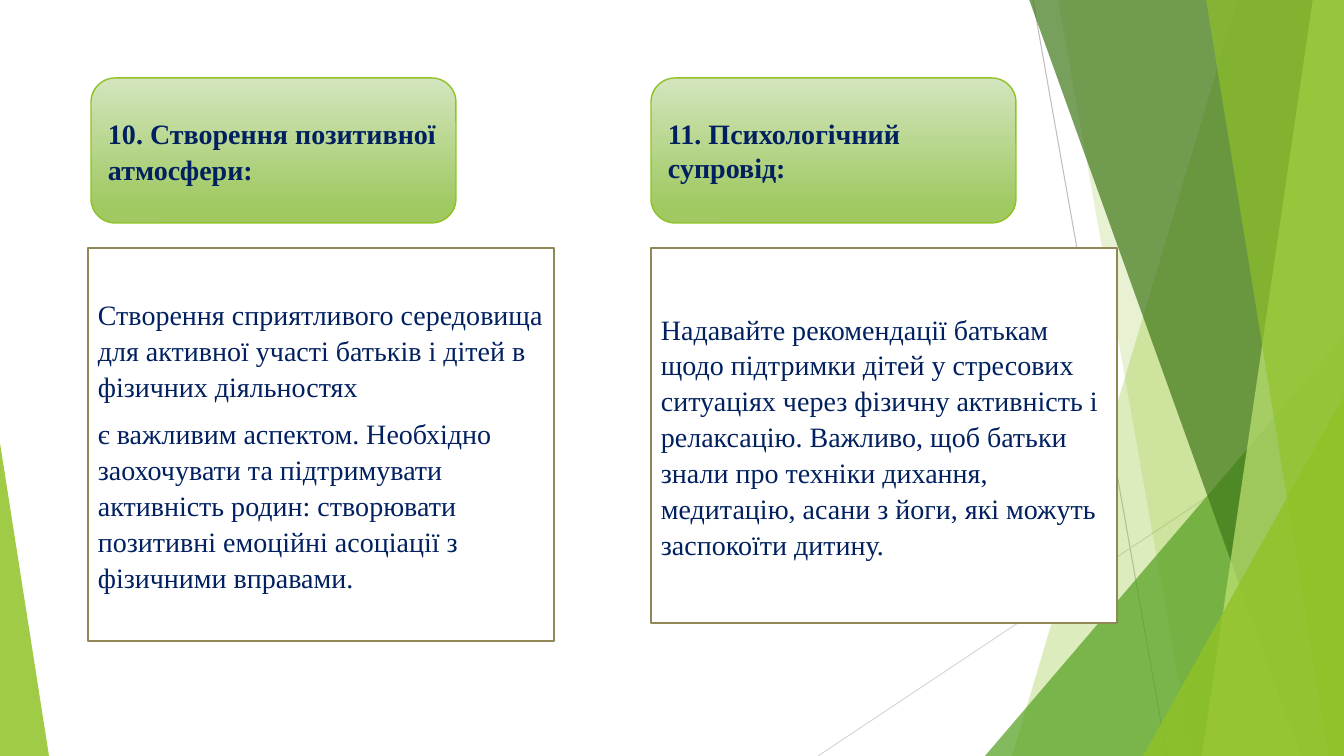
from lxml.etree import SubElement
from pptx import Presentation
from pptx.dml.color import RGBColor
from pptx.enum.shapes import MSO_CONNECTOR as CONN, MSO_SHAPE as SHAPE
from pptx.enum.text import MSO_ANCHOR as ANCHOR, PP_ALIGN as ALIGN
from pptx.oxml.ns import qn
from pptx.util import Pt

W, H = 1344, 756
EMU_PER_PX = 914400 / 100.8
FONT, NAVY, GREEN, OLIVE = "Times New Roman", "002060", "90C226", "918655"

RAYS = [((1033, 0), (1167, H), "BFBFBF"), ((W, 406), (818, H), "D9D9D9")]

# Bands run to the right edge: top x, bottom x, colour, opacity %.
# Corners are right triangles: left, top, width, height, apex, colour, opacity %.
FACETS = [
    ("band", (1238, 1012), GREEN, 30),
    ("band", (1058, 1192), GREEN, 20),
    ("corner", (985, 336, 359, 420, 1), "54A021", 72),
    ("band", (1029, 1301), "3F7819", 70),
    ("band", (1313, 1202), "C0E474", 70),
    ("band", (1206, 1329), GREEN, 65),
    ("corner", (1143, 396, 201, 360, 1), GREEN, 80),
    ("corner", (0, 443, 49, 313, 0), GREEN, 85),
]

# Box, paragraphs, line spacing, space before, space after
HEADINGS = [
    ((91, 78, 365, 145), ["10. Створення позитивної атмосфери:"], 1.07, 0, 8),
    ((651, 78, 365, 145), ["11. Психологічний супровід:"], 1, 0, 0),
]
BODIES = [
    ((88, 248, 466, 393), [
        "Створення сприятливого середовища для активної участі батьків і дітей "
        "в фізичних діяльностях",
        "є важливим аспектом. Необхідно заохочувати та підтримувати активність "
        "родин: створювати позитивні емоційні асоціації з фізичними вправами.",
    ], 1.07, 0, 8),
    ((651, 248, 466, 375), [
        "Надавайте рекомендації батькам щодо підтримки дітей у стресових "
        "ситуаціях через фізичну активність і релаксацію. Важливо, щоб батьки "
        "знали про техніки дихання, медитацію, асани з йоги, які можуть "
        "заспокоїти дитину.",
    ], 1.07, 12, 8),
]


def px(n):
    return round(n * EMU_PER_PX)


def rgb(color):
    return RGBColor.from_string(color)


def add_ray(shapes, start, end, color):
    line = shapes.add_connector(CONN.STRAIGHT, *map(px, start + end))
    line.line.color.rgb = rgb(color)
    line.line.width = Pt(0.75)
    SubElement(line._element.spPr, qn("a:effectLst"))


def add_shape(shapes, kind, box):
    sp = shapes.add_shape(kind, *map(px, box))
    sp.shadow.inherit = False
    return sp


def add_facet(shapes, kind, geometry, color, opacity):
    if kind == "band":
        top_x, bottom_x = geometry
        outline = shapes.build_freeform(top_x, -1, scale=EMU_PER_PX)
        outline.add_line_segments([(W, -1), (W, H), (bottom_x, H)])
        sp = outline.convert_to_shape()
        sp.shadow.inherit = False
    else:
        *box, apex = geometry
        sp = add_shape(shapes, SHAPE.ISOSCELES_TRIANGLE, box)
        sp.adjustments[0] = apex
    sp.line.fill.background()
    sp.fill.solid()
    sp.fill.fore_color.rgb = rgb(color)
    clr = sp._element.spPr.find(qn("a:solidFill"))[0]
    SubElement(clr, qn("a:alpha"), val=str(opacity * 1000))


def add_card(shapes, kind, line, width, bold, card):
    box, texts, spacing, before, after = card
    sp = add_shape(shapes, kind, box)
    sp.line.color.rgb = rgb(line)
    sp.line.width = Pt(width)
    tf = sp.text_frame
    tf.word_wrap = True
    tf.vertical_anchor = ANCHOR.MIDDLE
    for i, text in enumerate(texts):
        p = tf.add_paragraph() if i else tf.paragraphs[0]
        p.text = text
        p.alignment = ALIGN.LEFT
        p.line_spacing = spacing
        p.space_before, p.space_after = Pt(before), Pt(after)
        p.font.name, p.font.size, p.font.bold = FONT, Pt(20), bold
        p.font.color.rgb = rgb(NAVY)
    return sp


def main():
    prs = Presentation()
    prs.slide_width, prs.slide_height = px(W), px(H)
    shapes = prs.slides.add_slide(prs.slide_layouts[6]).shapes

    for ray in RAYS:
        add_ray(shapes, *ray)
    for facet in FACETS:
        add_facet(shapes, *facet)
    for heading in HEADINGS:
        sp = add_card(shapes, SHAPE.ROUNDED_RECTANGLE, GREEN, 1, True, heading)
        sp.fill.gradient()
        sp.fill.gradient_angle = 270
        for stop, position, color in zip(
                sp.fill.gradient_stops, (0, 0.88), ("D3E5BE", "A0C962")):
            stop.position = position
            stop.color.rgb = rgb(color)
    for body in BODIES:
        sp = add_card(shapes, SHAPE.RECTANGLE, OLIVE, 1.5, False, body)
        sp.fill.solid()
        sp.fill.fore_color.rgb = rgb("FFFFFF")

    prs.save("out.pptx")


if __name__ == "__main__":
    main()
